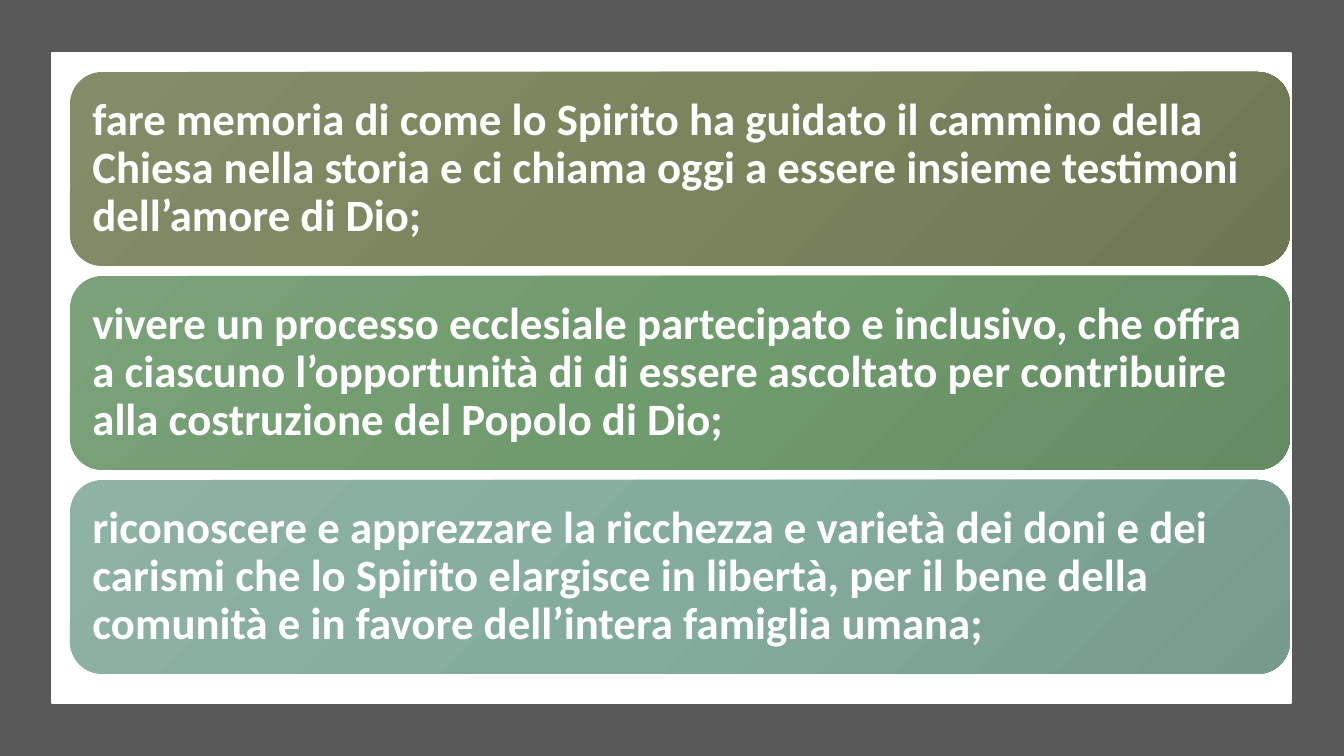
import copy

import pptx
import pptx.dml.color
import pptx.enum.shapes
import pptx.enum.text
import pptx.oxml.ns
import pptx.util

PX = 914400 / 100.8
THEME = {
    "frame": "595959",
    "paper": "FFFFFF",
    "text": "FFFFFF",
    "font": "Calibri",
    "size": 32,
    "olive": ("838E69", "7A855D", "6E7754"),
    "green": ("7BA279", "709B6E", "658B63"),
    "teal": ("8EB2A4", "84AC9D", "769B8D"),
}
GOALS = [
    ("olive", "fare memoria di come lo Spirito ha guidato il cammino della Chiesa nella storia "
              "e ci chiama oggi a essere insieme testimoni dell’amore di Dio;"),
    ("green", "vivere un processo ecclesiale partecipato e inclusivo, che offra a ciascuno "
              "l’opportunità di di essere ascoltato per contribuire alla costruzione del Popolo di Dio;"),
    ("teal", "riconoscere e apprezzare la ricchezza e varietà dei doni e dei carismi che lo Spirito "
             "elargisce in libertà, per il bene della comunità e in favore dell’intera famiglia umana;"),
]
CARD_LEFT, CARD_TOP, CARD_WIDTH, CARD_HEIGHT, CARD_PITCH = 70, 72, 1220, 194, 204
INSET = 13


def px(length):
    return pptx.util.Emu(round(length * PX))


def add_panel(kind, left, top, width, height):
    shape = slide.shapes.add_shape(kind, px(left), px(top), px(width), px(height))
    shape.shadow.inherit = False
    shape.line.fill.background()
    return shape


presentation = pptx.Presentation()
presentation.slide_width, presentation.slide_height = px(1344), px(756)
slide = presentation.slides.add_slide(presentation.slide_layouts[6])
shape_kinds = pptx.enum.shapes.MSO_SHAPE

# Grey frame and white paper
for colour, box in (("frame", (0, 0, 1344, 756)), ("paper", (52, 53, 1239, 650))):
    panel = add_panel(shape_kinds.RECTANGLE, *box)
    panel.fill.solid()
    panel.fill.fore_color.rgb = pptx.dml.color.RGBColor.from_string(THEME[colour])
panel.line.color.rgb = pptx.dml.color.RGBColor.from_string(THEME["paper"])
panel.line.width = pptx.util.Pt(1)

# Goal cards
for row, (palette, text) in enumerate(GOALS):
    card = add_panel(shape_kinds.ROUNDED_RECTANGLE, CARD_LEFT, CARD_TOP + row * CARD_PITCH,
                     CARD_WIDTH, CARD_HEIGHT)

    # Diagonal gradient with a third stop
    card.fill.gradient()
    card.fill.gradient_angle = 315
    stop_list = card._element.spPr.find(".//" + pptx.oxml.ns.qn("a:gsLst"))
    stop_list.append(copy.deepcopy(stop_list[0]))
    for stop, position, colour in zip(card.fill.gradient_stops, (0, 0.5, 1), THEME[palette]):
        stop.position = position
        stop.color.rgb = pptx.dml.color.RGBColor.from_string(colour)

    # Card text
    frame = card.text_frame
    frame.word_wrap = True
    frame.vertical_anchor = pptx.enum.text.MSO_ANCHOR.MIDDLE
    frame.margin_left = frame.margin_right = px(INSET)
    frame.margin_top = frame.margin_bottom = px(INSET)
    paragraph = frame.paragraphs[0]
    paragraph.text = text
    paragraph.alignment = pptx.enum.text.PP_ALIGN.LEFT
    paragraph.line_spacing = 0.9
    paragraph.font.name = THEME["font"]
    paragraph.font.size = pptx.util.Pt(THEME["size"])
    paragraph.font.bold = True
    paragraph.font.color.rgb = pptx.dml.color.RGBColor.from_string(THEME["text"])

presentation.save("out.pptx")
